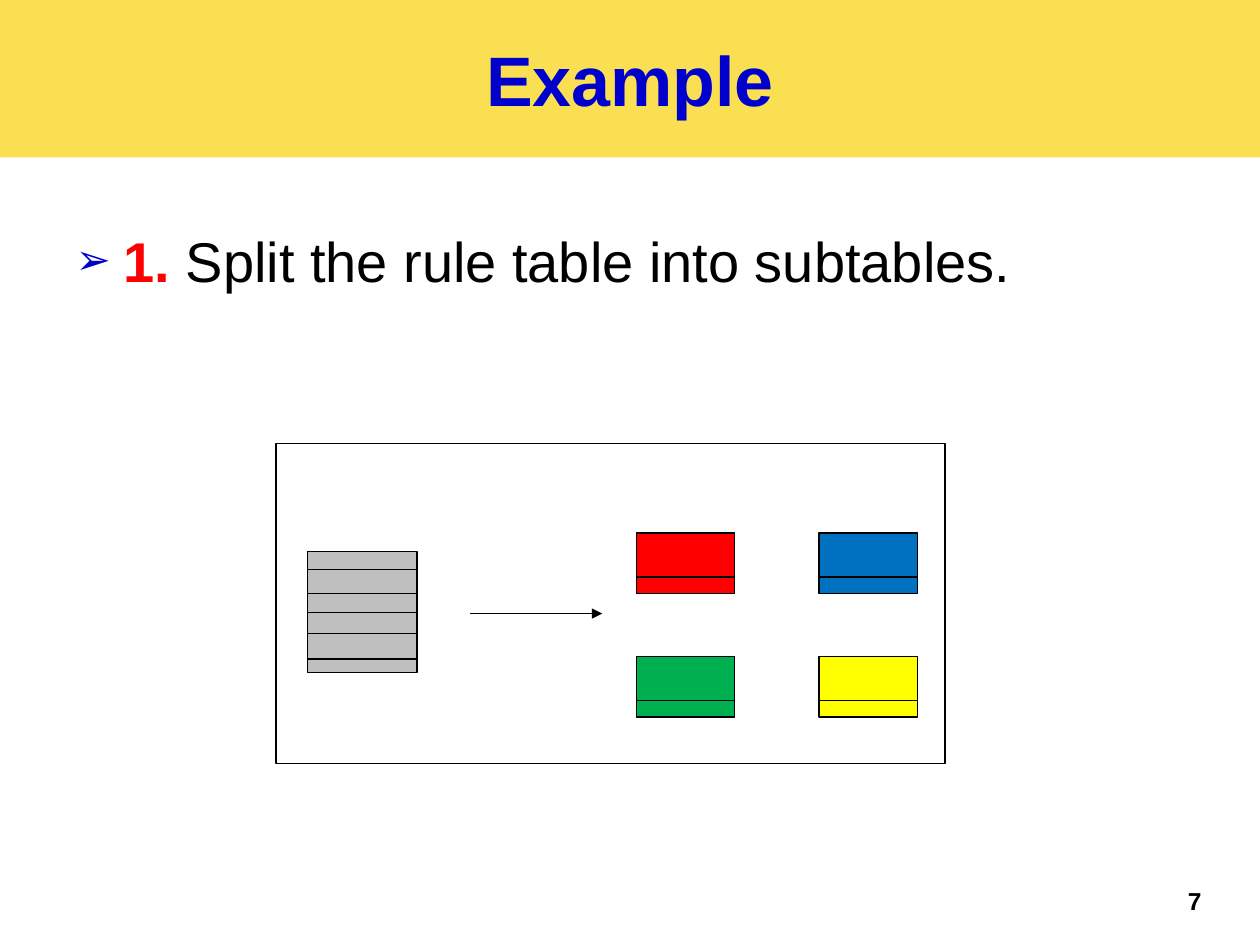
from lxml import etree
from pptx import Presentation
from pptx.dml.color import RGBColor
from pptx.enum.shapes import MSO_CONNECTOR, MSO_SHAPE
from pptx.enum.text import MSO_ANCHOR, MSO_AUTO_SIZE, PP_ALIGN
from pptx.oxml.ns import qn
from pptx.util import Inches, Pt

RECT = MSO_SHAPE.RECTANGLE
LINE = MSO_CONNECTOR.STRAIGHT
MIDDLE = MSO_ANCHOR.MIDDLE
CENTER = PP_ALIGN.CENTER
NO_FIT = MSO_AUTO_SIZE.NONE
WIDE, HIGH = 10, 7.5
BLUE, BLACK = "0000CC", "000000"


def color(code):
    return RGBColor.from_string(code)


def place(item, left, top, width, height):
    item.left, item.top = Inches(left), Inches(top)
    item.width, item.height = Inches(width), Inches(height)


def write(para, text, size=32, tint=BLACK, bold=False):
    run = para.add_run()
    run.text = text
    font = run.font
    font.name, font.size, font.bold = "Arial", Pt(size), bold
    font.color.rgb = color(tint)


def bullet(para, mark, tint, share, indent):
    props = para._p.get_or_add_pPr()
    props.set("marL", str(Inches(indent)))
    props.set("indent", str(-Inches(indent)))
    hue = etree.SubElement(props, qn("a:buClr"))
    etree.SubElement(hue, qn("a:srgbClr"), val=tint)
    etree.SubElement(props, qn("a:buSzPct"), val=str(share * 1000))
    etree.SubElement(props, qn("a:buFont"), typeface="Arial")
    etree.SubElement(props, qn("a:buChar"), char=mark)


def box(group, left, top, width, height, fill):
    item = group.shapes.add_shape(RECT, *map(Inches, (left, top, width, height)))
    item.shadow.inherit = False
    item.fill.solid()
    item.fill.fore_color.rgb = color(fill)
    item.line.color.rgb = color(BLACK)
    item.line.width = Pt(0.75)
    return item


def rule(group, left, right, top, arrow=False):
    item = group.shapes.add_connector(LINE, *map(Inches, (left, top, right, top)))
    item.line.color.rgb = color(BLACK)
    item.line.width = Pt(0.75)
    if arrow:
        stroke = item.line._get_or_add_ln()
        etree.SubElement(stroke, qn("a:tailEnd"), type="triangle")
    etree.SubElement(item._element.spPr, qn("a:effectLst"))
    return item


def heading(slide):
    title = slide.shapes.title
    place(title, 0, 0, WIDE, HIGH / 6)
    title.fill.solid()
    title.fill.fore_color.rgb = color("FBDF53")
    frame = title.text_frame
    frame.vertical_anchor = MIDDLE
    frame.auto_size = NO_FIT
    para = frame.paragraphs[0]
    para.alignment = CENTER
    write(para, "Example", size=40, tint=BLUE, bold=True)


def step(slide):
    body = slide.placeholders[1]
    place(body, 0.05 * WIDE, 1.75, 0.9 * WIDE, 0.66 * HIGH)
    body.text_frame.auto_size = NO_FIT
    para = body.text_frame.paragraphs[0]
    bullet(para, "➢", BLUE, 75, 0.38)
    write(para, "1. ", tint="FF0000", bold=True)
    write(para, "Split the rule table into subtables.")


def table(group):
    left, top, width, height = 2.44, 4.38, 0.87, 0.96
    whole = box(group, left, top, width, height, "BFBFBF")
    for row in (4.52, 4.71, 5.03, 5.23):
        rule(group, left, left + width, row)
    center = rule(group, left, left + width, top + height / 2)
    center.begin_connect(whole, 1)
    center.end_connect(whole, 3)


def parts(group):
    width, height = 0.78, 0.48
    fills = (("FF0000", "0070C0"), ("00B050", "FFFF00"))
    for row, pair in enumerate(fills):
        for col, fill in enumerate(pair):
            left, top = 5.05 + 1.45 * col, 4.23 + 0.98 * row
            box(group, left, top, width, height, fill)
            rule(group, left, left + width, top + 0.35)


def number(slide):
    item = slide.shapes.add_textbox(0, 0, 0, 0)
    place(item, 9.33, 6.98, 0.67, 0.52)
    item.text_frame.word_wrap = True
    write(item.text_frame.paragraphs[0], "7", size=14, bold=True)


def main():
    deck = Presentation()
    deck.slide_width, deck.slide_height = Inches(WIDE), Inches(HIGH)
    slide = deck.slides.add_slide(deck.slide_layouts[1])
    heading(slide)
    step(slide)
    group = slide.shapes.add_group_shape()
    box(group, 2.19, 3.52, 5.31, 2.54, "FFFFFF")
    table(group)
    rule(group, 3.73, 4.78, 4.87, arrow=True)
    parts(group)
    number(slide)
    deck.save("out.pptx")


if __name__ == "__main__":
    main()
